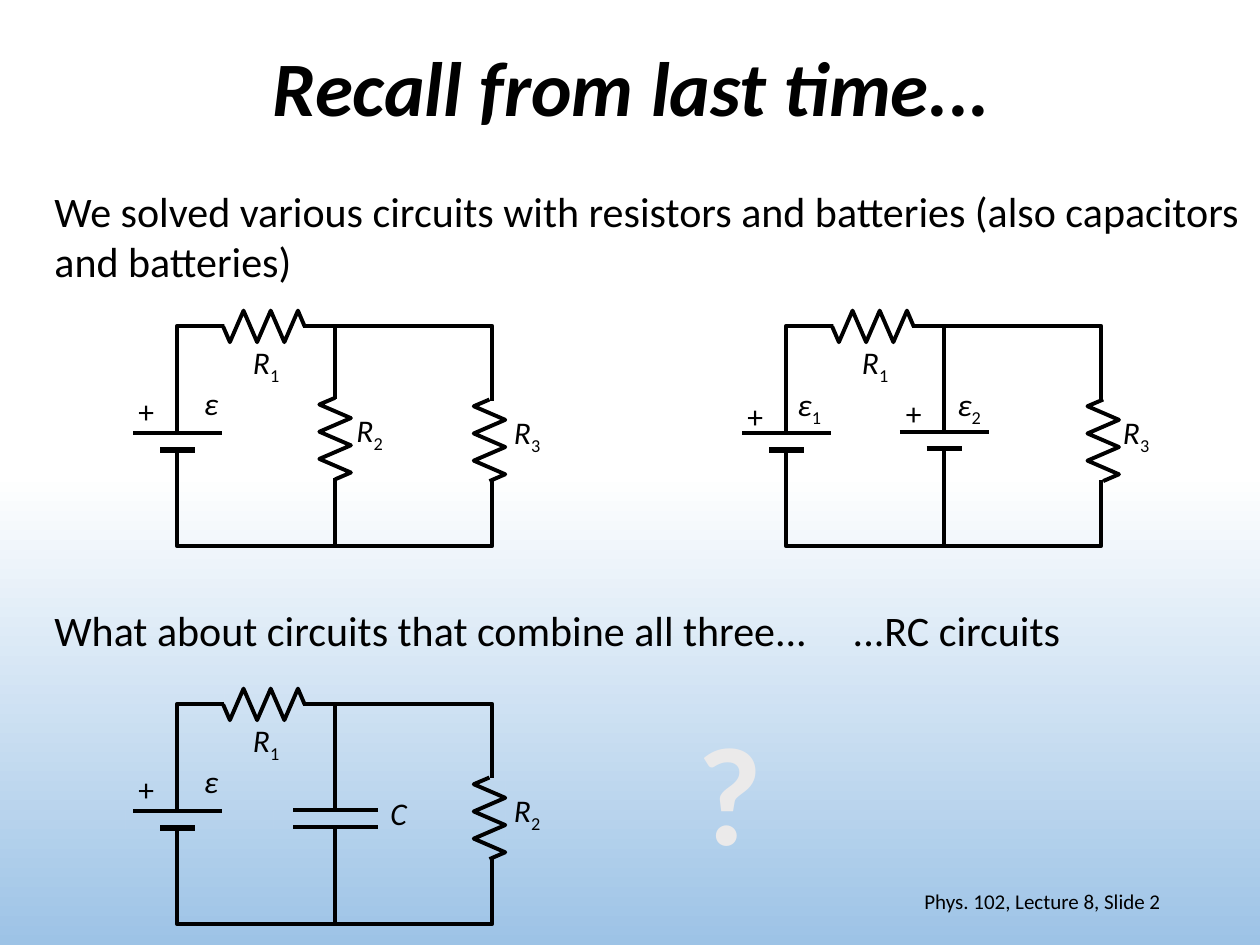
"""Builds a slide that recalls resistor circuits and introduces RC circuits."""
from pptx import Presentation
from pptx.dml.color import RGBColor
from pptx.enum.shapes import MSO_CONNECTOR as Connector, MSO_SHAPE as Preset
from pptx.enum.text import MSO_ANCHOR as Anchor, MSO_AUTO_SIZE as AutoSize, PP_ALIGN as Align
from pptx.oxml.ns import qn
from pptx.util import Pt

RESISTOR_LENGTH, RESISTOR_HEIGHT = 46.6, 18
TOP, MIDDLE_WIRE, MIDDLE = 186.5, 191.3, 251.6
BATTERY = 101.6


def color(value):
    return RGBColor.from_string(value)


class SlidePainter:
    font = "Calibri"
    ink = "000000"
    line_width = 2.25

    def __init__(self, page):
        self.page = page
        self.shapes = page.shapes
        self.left = self.top = 0

    def background(self, *stops):
        fill = self.page.background.fill
        fill.gradient()
        fill.gradient_angle = 270
        for stop, (position, value) in zip(fill.gradient_stops, stops):
            stop.position = position
            stop.color.rgb = color(value)

    def start_circuit(self, left, top):
        self.shapes = self.page.shapes.add_group_shape().shapes
        self.left, self.top = left, top

    def end_circuit(self):
        self.shapes = self.page.shapes
        self.left = self.top = 0

    def place(self, x, y):
        return Pt(self.left + x), Pt(self.top + y)

    def format_span(self, span, size, bold=False, italic=False, value=None):
        span.font.name = self.font
        span.font.size = Pt(size)
        span.font.bold = bold
        span.font.italic = italic
        span.font.color.rgb = color(value or self.ink)

    def title(self, text, x, y, width, height):
        box = self.shapes.title
        box.left, box.top, box.width, box.height = Pt(x), Pt(y), Pt(width), Pt(height)
        frame = box.text_frame
        frame.text = text
        frame.vertical_anchor = Anchor.MIDDLE
        para = frame.paragraphs[0]
        para.alignment = Align.CENTER
        para.line_spacing = 0.9
        self.format_span(para.runs[0], 44, bold=True, italic=True)

    def text(self, text, x, y, width, height, size=24, wrap=False, grow=True,
             align=Align.LEFT, anchor=Anchor.TOP, **style):
        box = self.shapes.add_textbox(*self.place(x, y), Pt(width), Pt(height))
        frame = box.text_frame
        frame.text = text
        frame.word_wrap = wrap
        frame.auto_size = AutoSize.SHAPE_TO_FIT_TEXT if grow else AutoSize.NONE
        frame.vertical_anchor = anchor
        para = frame.paragraphs[0]
        para.alignment = align
        self.format_span(para.runs[0], size, **style)
        return para

    def label(self, symbol, x, y, subscript="", italic=True):
        width = 30 if subscript else 23.5
        para = self.text(symbol, x, y, width, 29, size=18, italic=italic)
        if subscript:
            span = para.add_run()
            span.text = subscript
            self.format_span(span, 18)
            span._r.get_or_add_rPr().set("baseline", "-25000")

    def finish(self, shape, outlined, rotation=0):
        shape.shadow.inherit = False
        shape._element.set("useBgFill", "1")
        shape.rotation = rotation
        if outlined:
            shape.line.color.rgb = color(self.ink)
            shape.line.width = Pt(self.line_width)
        else:
            shape.line.fill.background()

    def rectangle(self, x, y, width, height, outlined=False, rotation=0):
        corner = self.place(x - width / 2, y - height / 2)
        shape = self.shapes.add_shape(Preset.RECTANGLE, *corner, Pt(width), Pt(height))
        self.finish(shape, outlined, rotation)

    def wire(self, x1, y1, x2, y2, width=line_width):
        line = self.shapes.add_connector(
            Connector.STRAIGHT, *self.place(x1, y1), *self.place(x2, y2))
        line.line.color.rgb = color(self.ink)
        line.line.width = Pt(width)
        properties = line._element.spPr
        properties.append(properties.makeelement(qn("a:effectLst"), {}))

    def resistor(self, x, y, rotation=0):
        self.rectangle(x, y, 45, 18.6, rotation=rotation)
        left, half = x - RESISTOR_LENGTH / 2, RESISTOR_HEIGHT / 2
        peaks = [(left + 3.9 + 7.78 * step, y + half * (-1) ** step) for step in range(6)]
        builder = self.shapes.build_freeform(*self.place(left, y), scale=1.0)
        points = peaks + [(left + RESISTOR_LENGTH, y)]
        builder.add_line_segments([self.place(*point) for point in points], close=False)
        self.finish(builder.convert_to_shape(), True, rotation)

    def plates(self, x, y, upper, lower, lower_width, gap_width):
        self.rectangle(x, y + 5, gap_width, 11.5)
        self.wire(x - upper / 2, y, x + upper / 2, y)
        self.wire(x - lower / 2, y + 9.6, x + lower / 2, y + 9.6, lower_width)

    def battery(self, x, y):
        self.plates(x, y, 50.8, 20.2, 3, 59.8)

    def capacitor(self, x, y):
        self.plates(x, y, 48.2, 48.2, self.line_width, 71.3)

    def loop(self, right_resistor):
        self.rectangle(191.2, 249.1, 126, 180, outlined=True, rotation=270)
        self.wire(MIDDLE_WIRE, TOP, MIDDLE_WIRE, 311.8)
        self.resistor(150.8, TOP)
        self.resistor(right_resistor, MIDDLE, 270)
        self.battery(BATTERY, 247.5)
        self.label("R", 137.5, 192.4, "1")


def main():
    deck = Presentation()
    deck.slide_width, deck.slide_height = Pt(720), Pt(540)
    page = deck.slides.add_slide(deck.slide_layouts[5])
    painter = SlidePainter(page)
    painter.background((0.5, "FFFFFF"), (1, "9DC3E6"))
    painter.title("Recall from last time...", 51, 0, 620.6, 104.4)
    painter.text("We solved various circuits with resistors and batteries "
                 "(also capacitors and batteries)", 24, 102.2, 696, 65.4, wrap=True)

    painter.start_circuit(0, 0)
    painter.loop(279.7)
    painter.resistor(191.5, 250.6, 270)
    painter.label("+", 72, 220.3, italic=False)
    painter.label("ε", 109.4, 216)
    painter.label("R", 196.6, 231.1, "2")
    painter.label("R", 286.6, 232.6, "3")

    painter.start_circuit(348, 0)
    painter.loop(282.4)
    painter.battery(BATTERY + 90, 246.8)
    painter.label("+", 72, 223.2, italic=False)
    painter.label("+", 162.5, 221.8, italic=False)
    painter.label("ε", 100.6, 216.7, "1")
    painter.label("ε", 192, 216.7, "2")
    painter.label("R", 286.6, 232.6, "3")

    painter.start_circuit(0, 216)
    painter.loop(279.7)
    painter.capacitor(MIDDLE_WIRE + 0.5, 247)
    painter.label("+", 72, 220.3, italic=False)
    painter.label("ε", 109.4, 216)
    painter.label("C", 216, 234)
    painter.label("R", 286.6, 232.6, "2")
    painter.end_circuit()

    painter.text("What about circuits that combine all three...", 24, 342, 448.6, 36)
    painter.text("...RC circuits", 480.2, 342, 134, 36)
    painter.text("?", 390.2, 399.6, 54, 104.4, size=80, wrap=True,
                 align=Align.CENTER, bold=True, value="EBEAEA")
    painter.text("Phys. 102, Lecture 8, Slide 2", 508.3, 500.4, 162, 28.8, size=12,
                 wrap=True, grow=False, align=Align.RIGHT, anchor=Anchor.MIDDLE)
    deck.save("out.pptx")


if __name__ == "__main__":
    main()
